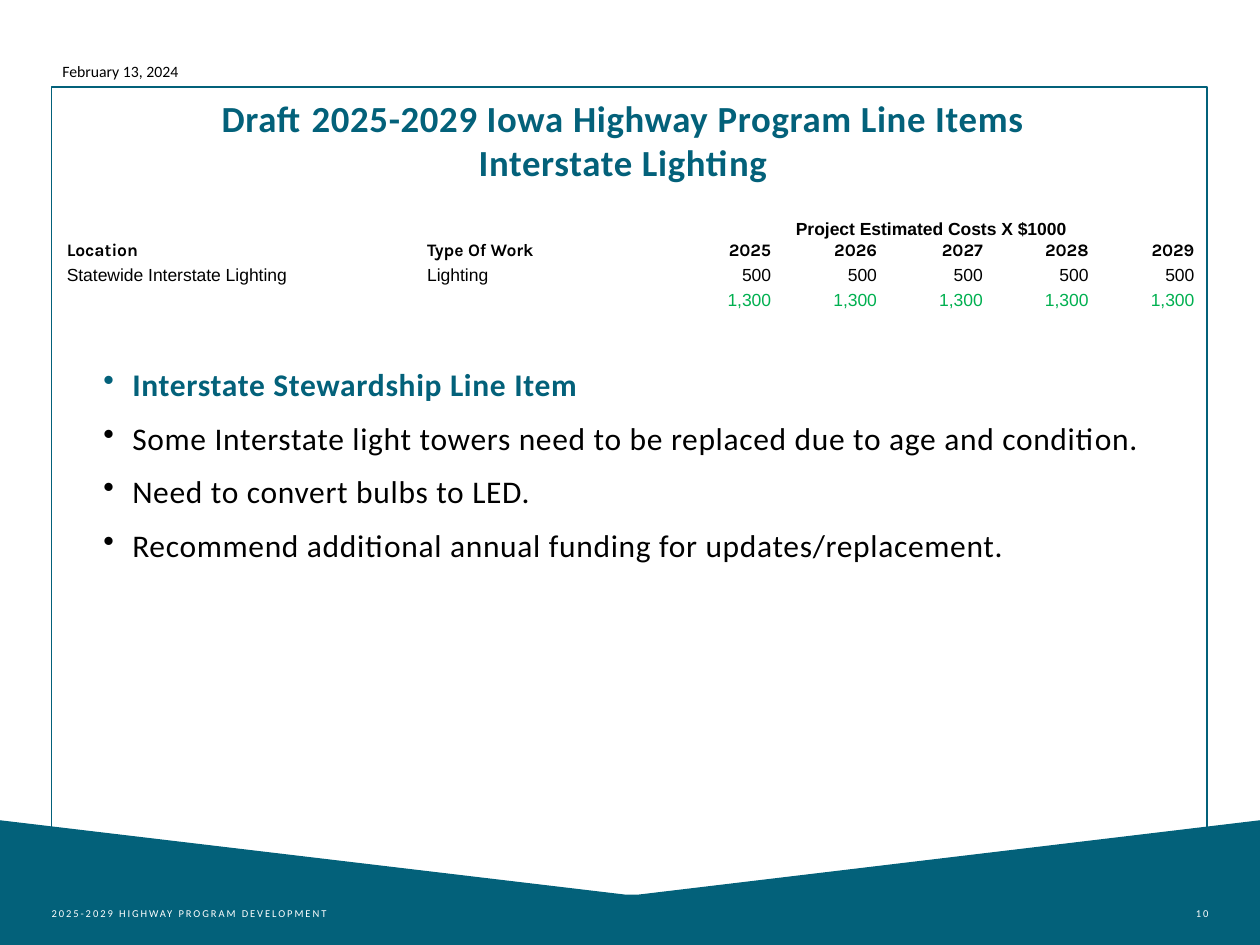
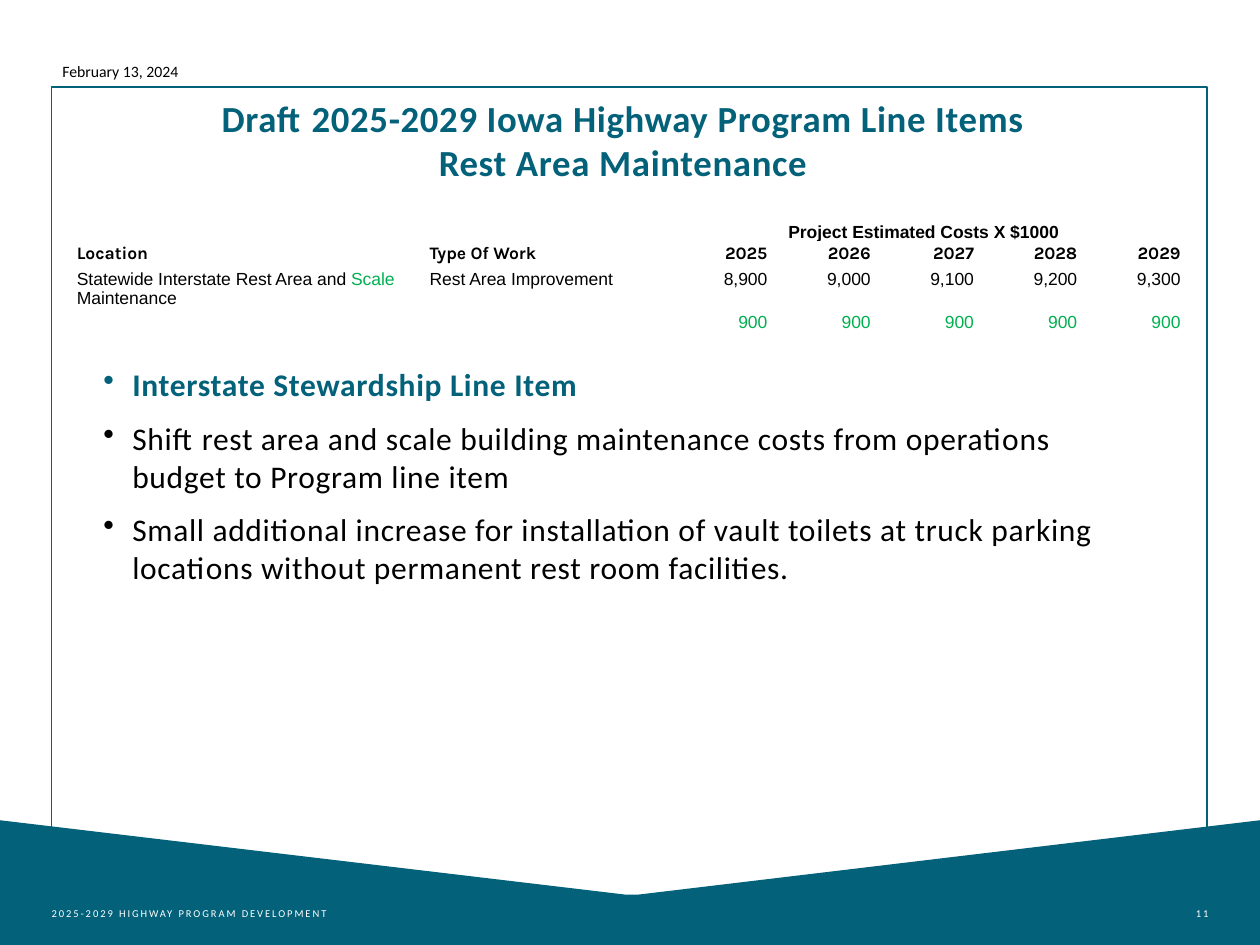
from lxml.etree import SubElement
from pptx import Presentation
from pptx.dml.color import RGBColor
from pptx.enum.shapes import MSO_SHAPE
from pptx.enum.text import MSO_ANCHOR, MSO_AUTO_SIZE, PP_ALIGN
from pptx.oxml.ns import qn
from pptx.util import Inches, Pt

TEAL = RGBColor(0x03, 0x61, 0x7A)
GREEN = RGBColor(0x00, 0xB0, 0x50)
BLACK = RGBColor(0, 0, 0)
WHITE = RGBColor(255, 255, 255)

BAND_POINTS = [(0, 6.51), (4.96, 7.1), (5.07, 7.1), (10, 6.51), (10, 7.5), (0, 7.5)]
COSTS_TITLE = ["", "", "Project Estimated Costs X $1000"] + [""] * 4
COLUMN_HEADS = ["Location", "Type Of Work", "2025", "2026", "2027", "2028", "2029"]
ADDED_FUNDS_ROW = 3

# Within a cell, a tuple alternates plain and highlighted pieces of text.
LINE_ITEMS = [
    {
        "name": "Interstate Lighting",
        "number": "10",
        "table_at": (0.52, 1.69),
        "columns": [2.86, 1.91] + [0.84] * 5,
        "heights": [0.21, 0.2, 0.2, 0.2, 0.2, 0.18],
        "rows": [
            ["Statewide Interstate Lighting", "Lighting"] + ["500"] * 5,
            ["", ""] + ["1,300"] * 5,
            [""] * 7,
            [""] * 7,
        ],
        "points": [
            "Some Interstate light towers need to be replaced due to age and condition.",
            "Need to convert bulbs to LED.",
            "Recommend additional annual funding for updates/replacement.",
        ],
    },
    {
        "name": "Rest Area Maintenance",
        "number": "11",
        "table_at": (0.6, 1.71),
        "columns": [2.8, 1.88] + [0.82] * 5,
        "heights": [0.21, 0.21, 0.32, 0.21],
        "rows": [
            [("Statewide Interstate Rest Area and ", "Scale", " Maintenance"),
             "Rest Area Improvement", "8,900", "9,000", "9,100", "9,200", "9,300"],
            ["", ""] + ["900"] * 5,
        ],
        "points": [
            "Shift rest area and scale building maintenance costs from operations "
            "budget to Program line item",
            "Small additional increase for installation of vault toilets at truck parking "
            "locations without permanent rest room facilities.",
        ],
    },
]


def style_run(run, size, color, bold=False, font="Calibri", spacing=0):
    run.font.size = Pt(size)
    run.font.name = font
    run.font.bold = bold
    run.font.color.rgb = color
    if spacing:
        run._r.get_or_add_rPr().set("spc", str(round(spacing * 100)))


def add_text(slide, box, text, margins=(0.1, 0.1), wrap=True, anchor=MSO_ANCHOR.TOP):
    """Add a text box with the given left and right margins; return its frame."""
    frame = slide.shapes.add_textbox(*map(Inches, box)).text_frame
    frame.margin_left, frame.margin_right = map(Inches, margins)
    frame.word_wrap = wrap
    frame.vertical_anchor = anchor
    frame.text = text
    return frame


prs = Presentation()
prs.slide_width, prs.slide_height = Inches(10), Inches(7.5)

for item in LINE_ITEMS:
    slide = prs.slides.add_slide(prs.slide_layouts[5])

    # Band, frame and footer
    start, *corners = [(Inches(x), Inches(y)) for x, y in BAND_POINTS]
    outline = slide.shapes.build_freeform(*start)
    outline.add_line_segments(corners, close=True)
    band = outline.convert_to_shape()
    band.shadow.inherit = False
    band.fill.solid()
    band.fill.fore_color.rgb = TEAL
    band.line.fill.background()

    border = slide.shapes.add_shape(
        MSO_SHAPE.RECTANGLE, Inches(0.41), Inches(0.69), Inches(9.17), Inches(6.66))
    border.shadow.inherit = False
    border.fill.background()
    border.line.color.rgb = TEAL
    border.line.width = Pt(1)

    for left, width, text, align in [
        (0.41, 2.67, "2025-2029 HIGHWAY PROGRAM DEVELOPMENT", PP_ALIGN.LEFT),
        (8.62, 0.97, item["number"], PP_ALIGN.RIGHT),
    ]:
        footer = add_text(slide, (left, 6.95, width, 0.4), text, (0, 0),
                          anchor=MSO_ANCHOR.BOTTOM).paragraphs[0]
        footer.alignment = align
        style_run(footer.runs[0], 6, WHITE, spacing=1.1)

    # Date and title
    date_frame = add_text(slide, (0.32, 0.44, 1.27, 0.25), "February 13, 2024", wrap=False)
    date_frame.auto_size = MSO_AUTO_SIZE.SHAPE_TO_FIT_TEXT
    date_frame.paragraphs[0].alignment = PP_ALIGN.CENTER
    style_run(date_frame.paragraphs[0].runs[0], 9, BLACK)

    title = slide.shapes.title
    title.left, title.top = Inches(0.82), Inches(0.71)
    title.width, title.height = Inches(8.35), Inches(0.83)
    heading = title.text_frame
    heading.margin_left = 0
    heading.vertical_anchor = MSO_ANCHOR.TOP
    heading.auto_size = MSO_AUTO_SIZE.NONE
    heading.text = "Draft 2025-2029 Iowa Highway Program Line Items\n" + item["name"]
    for paragraph in heading.paragraphs:
        paragraph.alignment = PP_ALIGN.CENTER
        style_run(paragraph.runs[0], 21, TEAL, bold=True, spacing=0.4)

    # Cost table
    rows = [COSTS_TITLE, COLUMN_HEADS] + item["rows"]
    left, top = item["table_at"]
    costs = slide.shapes.add_table(
        len(rows), len(COLUMN_HEADS), Inches(left), Inches(top),
        Inches(sum(item["columns"])), Inches(sum(item["heights"]))).table
    costs.first_row = costs.horz_banding = False
    for column, width in zip(costs.columns, item["columns"]):
        column.width = Inches(width)
    for row, height in zip(costs.rows, item["heights"]):
        row.height = Inches(height)
    costs.cell(0, 2).merge(costs.cell(0, 6))

    for r, row in enumerate(rows):
        for c, content in enumerate(row):
            cell = costs.cell(r, c)
            cell.margin_left = cell.margin_right = cell.margin_top = Inches(0.01)
            cell.margin_bottom = 0
            if r == 1:
                cell.fill.solid()
                cell.fill.fore_color.rgb = WHITE
            else:
                cell.fill.background()
            paragraph = cell.text_frame.paragraphs[0]
            if not content:
                SubElement(paragraph._p, qn("a:endParaRPr"), sz="1000")
                continue
            if r == 0:
                cell.vertical_anchor = MSO_ANCHOR.BOTTOM
                paragraph.alignment = PP_ALIGN.CENTER
            else:
                paragraph.alignment = PP_ALIGN.RIGHT if c >= 2 else PP_ALIGN.LEFT
            pieces = content if isinstance(content, tuple) else (content,)
            for i, piece in enumerate(pieces):
                run = paragraph.add_run()
                run.text = piece
                highlighted = r == ADDED_FUNDS_ROW or i % 2 == 1
                style_run(run, 10, GREEN if highlighted else BLACK, bold=r < 2,
                          font="Karla" if r == 1 else "Arial")

    # Bullets
    points = ["Interstate Stewardship Line Item"] + item["points"]
    notes = add_text(slide, (0.82, 2.85, 8.35, 3.08), "\n".join(points), (0, 0.1))
    for i, paragraph in enumerate(notes.paragraphs):
        properties = paragraph._p.get_or_add_pPr()
        properties.set("marL", str(Inches(0.23)))
        properties.set("indent", str(-Inches(0.23)))
        SubElement(properties, qn("a:buChar"), char="•")
        if i > 0:
            paragraph.space_before = Pt(9)
        style_run(paragraph.runs[0], 18, BLACK if i else TEAL, bold=i == 0, spacing=0.4)

prs.save("out.pptx")
